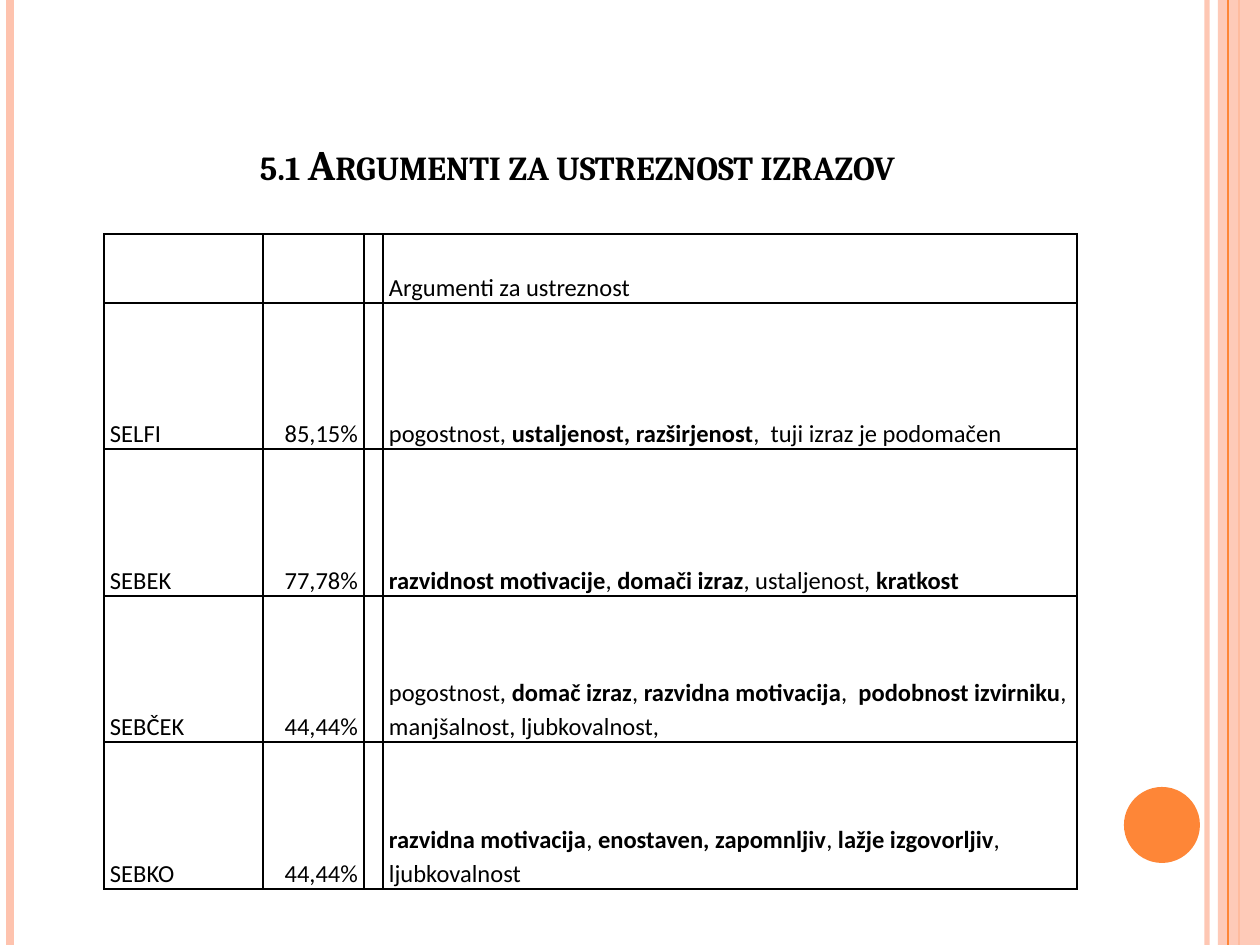
from dataclasses import dataclass

from lxml.etree import SubElement
from pptx import Presentation
from pptx.dml.color import RGBColor
from pptx.enum.shapes import MSO_CONNECTOR, MSO_SHAPE
from pptx.enum.text import MSO_ANCHOR, PP_ALIGN
from pptx.oxml.ns import qn
from pptx.util import Emu, Pt

TITLE = "5.1 Argumenti za ustreznost izrazov"
HEADING = "Argumenti za ustreznost"
TERMS = [
    ("SELFI", "85,15%", [
        ("pogostnost, ", False), ("ustaljenost, razširjenost", True),
        (",  tuji izraz je podomačen", False)]),
    ("SEBEK", "77,78%", [
        ("razvidnost motivacije", True), (", ", False), ("domači izraz", True),
        (", ustaljenost, ", False), ("kratkost", True)]),
    ("SEBČEK", "44,44%", [
        ("pogostnost, ", False), ("domač izraz", True), (", ", False),
        ("razvidna motivacija", True), (",  ", False),
        ("podobnost izvirniku", True), (", manjšalnost, ljubkovalnost,", False)]),
    ("SEBKO", "44,44%", [
        ("razvidna motivacija", True), (", ", False),
        ("enostaven, zapomnljiv", True), (", ", False),
        ("lažje izgovorljiv", True), (", ljubkovalnost", False)]),
]


@dataclass(frozen=True)
class Theme:
    orange: str = "FE8637"
    peach: str = "FEC3AE"
    ink: str = "000000"
    title_font: str = "Cambria"
    body_font: str = "Calibri"
    title_size: int = 24
    body_size: int = 14
    border: int = 1


THEME = Theme()
WIDTH, HEIGHT = 1260, 945
OUTER_STRIPES = [(1207, THEME.peach, 3, 93), (10, THEME.peach, 4.5, 100),
                 (1239, THEME.orange, 1.5, 100)]
INNER_STRIPE = (1228, THEME.orange, 0.75, 100)
TABLE_LEFT, TABLE_TOP = 104, 234
COLUMNS = [159, 101, 19, 694]
ROWS = [69, 146, 147, 146, 147]
CELL_INSET = 6


def px(length):
    return Emu(round(length * 914400 / 126))


def set_alpha(fill, color, percent):
    fill.solid()
    fill.fore_color.rgb = RGBColor.from_string(color)
    if percent < 100:
        choice = fill._xPr.find(qn("a:solidFill"))
        SubElement(choice[0], qn("a:alpha"), val=str(percent * 1000))


def add_stripe(slide, x, color, weight, opacity):
    stripe = slide.shapes.add_connector(
        MSO_CONNECTOR.STRAIGHT, px(x), 0, px(x), px(HEIGHT))
    stripe.line.width = Pt(weight)
    set_alpha(stripe.line.fill, color, opacity)
    SubElement(stripe._element.spPr, qn("a:effectLst"))


def add_solid(slide, preset, box, color, opacity=100):
    solid = slide.shapes.add_shape(preset, *map(px, box))
    solid.shadow.inherit = False
    solid.line.fill.background()
    set_alpha(solid.fill, color, opacity)


def add_run(paragraph, text, font, size, bold):
    run = paragraph.add_run()
    run.text = text
    run.font.name = font
    run.font.size = Pt(size)
    run.font.bold = bold
    run.font.color.rgb = RGBColor.from_string(THEME.ink)
    return run


def add_title(slide):
    title = slide.shapes.add_textbox(px(63), px(38), px(1029), px(157))
    title.text_frame.word_wrap = True
    title.text_frame.vertical_anchor = MSO_ANCHOR.BOTTOM
    paragraph = title.text_frame.paragraphs[0]
    paragraph.alignment = PP_ALIGN.CENTER
    run = add_run(paragraph, TITLE, THEME.title_font, THEME.title_size, True)
    run.font._element.set("cap", "small")


def style_cell(cell):
    cell.margin_left = cell.margin_right = px(CELL_INSET)
    cell.margin_top = cell.margin_bottom = 0
    cell.vertical_anchor = MSO_ANCHOR.BOTTOM
    properties = cell._tc.get_or_add_tcPr()
    for side in ("lnL", "lnR", "lnT", "lnB"):
        edge = SubElement(properties, qn(f"a:{side}"), w=str(Pt(THEME.border)))
        ink = SubElement(edge, qn("a:solidFill"))
        SubElement(ink, qn("a:srgbClr"), val=THEME.ink)
    cell.fill.background()


def add_arguments(slide):
    table = slide.shapes.add_table(
        len(ROWS), len(COLUMNS), px(TABLE_LEFT), px(TABLE_TOP),
        px(sum(COLUMNS)), px(sum(ROWS))).table
    table.first_row = table.horz_banding = False
    for column, width in zip(table.columns, COLUMNS):
        column.width = px(width)
    for row, height in zip(table.rows, ROWS):
        row.height = px(height)
    content = [[[], [], [], [(HEADING, False)]]]
    content += [[[(term, False)], [(share, False)], [], arguments]
                for term, share, arguments in TERMS]
    for r, row in enumerate(content):
        for c, pieces in enumerate(row):
            cell = table.cell(r, c)
            style_cell(cell)
            paragraph = cell.text_frame.paragraphs[0]
            paragraph.line_spacing = 1.15
            paragraph.alignment = PP_ALIGN.RIGHT if c == 1 else PP_ALIGN.LEFT
            paragraph.font.size = Pt(THEME.body_size)
            for text, bold in pieces:
                add_run(paragraph, text, THEME.body_font, THEME.body_size, bold)


def main():
    deck = Presentation()
    deck.slide_width, deck.slide_height = px(WIDTH), px(HEIGHT)
    slide = deck.slides.add_slide(deck.slide_layouts[6])
    for stripe in OUTER_STRIPES:
        add_stripe(slide, *stripe)
    add_solid(slide, MSO_SHAPE.RECTANGLE, (1218, 0, 42, HEIGHT), THEME.peach, 87)
    add_stripe(slide, *INNER_STRIPE)
    add_solid(slide, MSO_SHAPE.OVAL, (1124, 787, 76, 76), THEME.orange)
    add_title(slide)
    add_arguments(slide)
    deck.save("out.pptx")


if __name__ == "__main__":
    main()
